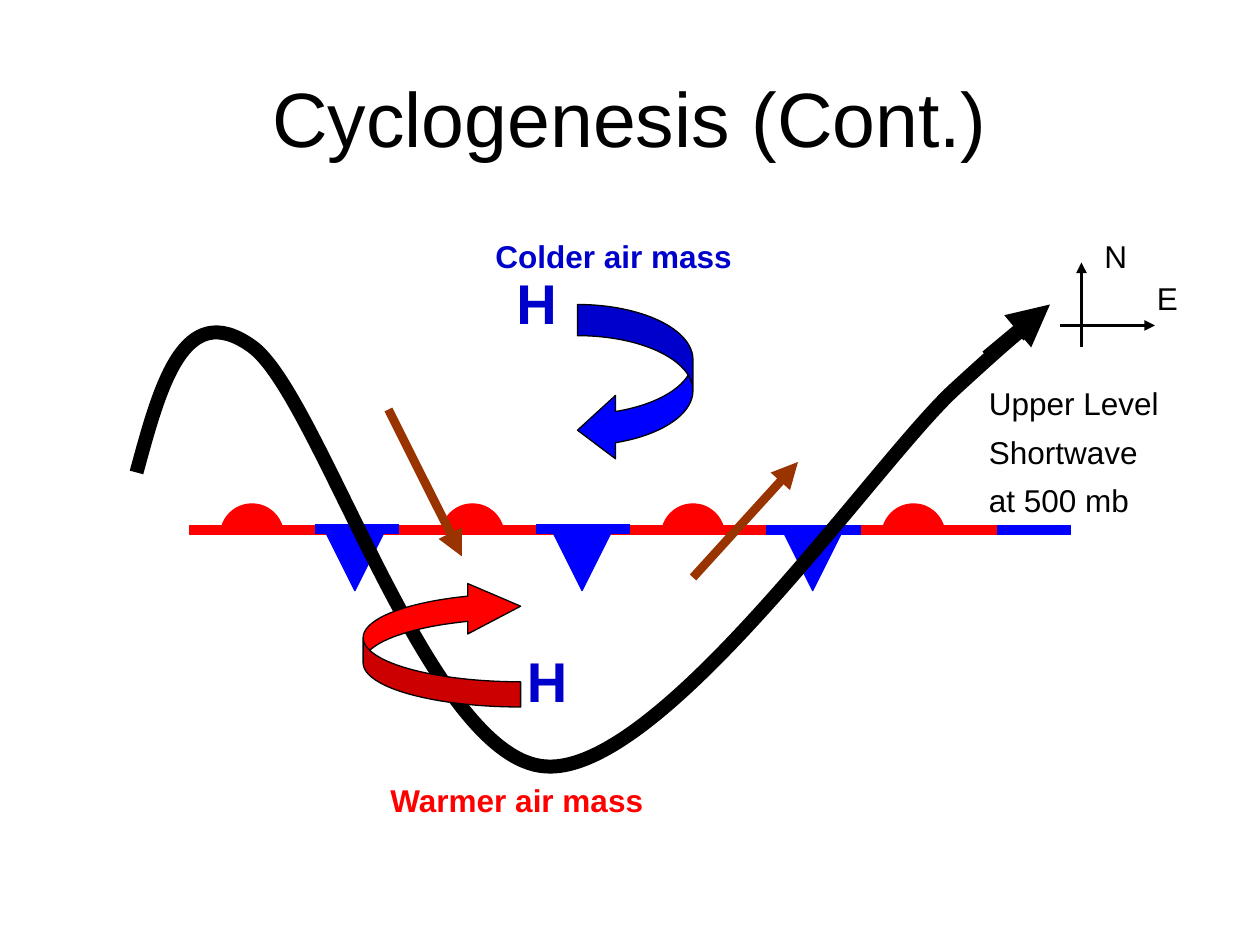
from lxml.etree import SubElement
from pptx import Presentation
from pptx.dml.color import RGBColor
from pptx.enum.shapes import MSO_CONNECTOR, MSO_SHAPE as SHAPE
from pptx.enum.text import MSO_ANCHOR, PP_ALIGN
from pptx.oxml.ns import qn
from pptx.util import Pt

COLORS = {"black": "000000", "white": "FFFFFF", "red": "FF0000", "blue": "0000FF",
          "navy": "0000CC", "brown": "993300"}

# text lines, (left, top, width, height), size, colour, bold
TITLE = (["Cyclogenesis (Cont.)"], (36, 21.6, 648, 90), 44, "black", False)
LABELS = [
    (["H"], (288, 150, 66, 45), 32, "navy", True),
    (["H"], (294, 366, 90, 45), 32, "navy", True),
    (["Warmer air mass"], (216, 443, 414, 29), 18, "red", True),
    (["Colder air mass"], (276, 132, 162, 29), 18, "navy", True),
    (["N"], (624, 132, 24, 29), 18, "black", False),
    (["E"], (654, 156, 24, 29), 18, "black", False),
    (["Upper Level", "Shortwave", "at 500 mb"], (558, 216, 120, 84), 18, "black", False),
]
LINE_GAP = 6  # keeps the last line of the shortwave label above the front

FRONT_LEFT, FRONT_RIGHT, FRONT_Y = 108, 612, 306
WARM_FIRST, WARM_STEP, WARM_COUNT, SYMBOL = 126, 126, 4, 36
# start, end, height of each cold part, and left of its triangle
COLD_PARTS = [(180, 228, 302.2, 184.8), (306, 360, 302.2, 314.6),
              (438, 492, 303, 446.4), (570, 612, 303, None)]

# start point, then groups of two control points and an end point
SHORTWAVE = [(78, 270), (91.5, 220.2), (105, 170), (144, 198),
             (182.9, 226.1), (244.8, 434.2), (312, 438),
             (378.7, 442.1), (501.1, 262.8), (546, 222),
             (591.1, 180.7), (586.8, 186.5), (582, 192)]
SHORTWAVE_HEAD = ((564, 204), (600, 174), "black", 8)
# box, rotation, adjustments, fill
CIRCULATION = [((330, 174, 66, 90), 0, (0.27, 0.55, 0.33), "blue"),
               ((207.5, 332, 90, 72), 180, (0.2, 0.4, 0.42), "red")]
WINDS = [((396, 330), (456, 264), "brown", 5), ((222, 234), (264, 318), "brown", 5)]
COMPASS = [((618, 198), (618, 150), "black", 2), ((606, 186), (660, 186), "black", 2)]


def rgb(name):
    return RGBColor.from_string(COLORS[name])


def add_text(shapes, lines, box, size, color, bold):
    tf = shapes.add_textbox(*map(Pt, box)).text_frame
    tf.word_wrap = True
    for i, line in enumerate(lines):
        p = tf.paragraphs[0] if i == 0 else tf.add_paragraph()
        if i:
            p.space_before = Pt(LINE_GAP)
        r = p.add_run()
        r.text = line
        r.font.name, r.font.size, r.font.bold = "Arial", Pt(size), bold
        r.font.color.rgb = rgb(color)
    return tf


def add_line(shapes, start, end, color, width, arrow=False):
    s = shapes.add_connector(MSO_CONNECTOR.STRAIGHT, *map(Pt, start + end))
    s.line.color.rgb, s.line.width = rgb(color), Pt(width)
    if arrow:
        SubElement(s.line._get_or_add_ln(), qn("a:tailEnd"), type="triangle")
    SubElement(s._element.spPr, qn("a:effectLst"))


def add_block(shapes, kind, box, fill, line=None, rotation=0, adjustments=()):
    s = shapes.add_shape(kind, *map(Pt, box))
    s.shadow.inherit = False
    s.rotation = rotation
    for i, value in enumerate(adjustments):
        s.adjustments[i] = value
    s.fill.solid()
    s.fill.fore_color.rgb = rgb(fill)
    s.line.color.rgb, s.line.width = rgb(line or fill), Pt(0.75)


def add_curve(shapes, points, color, width):
    """Draw a polyline through all points, then turn each three segments into a Bézier."""
    builder = shapes.build_freeform(*map(Pt, points[0]))
    builder.add_line_segments([(Pt(x), Pt(y)) for x, y in points[1:]], close=False)
    s = builder.convert_to_shape()
    s.shadow.inherit = False
    s.fill.background()
    s.line.color.rgb, s.line.width = rgb(color), Pt(width)
    path = next(s._element.iter(qn("a:path")))
    segments = path.findall(qn("a:lnTo"))
    for i in range(0, len(segments), 3):
        bezier = SubElement(path, qn("a:cubicBezTo"))
        for segment in segments[i:i + 3]:
            bezier.append(segment[0])
            path.remove(segment)


def add_front(shapes):
    add_line(shapes, (FRONT_LEFT, FRONT_Y), (FRONT_RIGHT, FRONT_Y), "red", 12)
    for i in range(WARM_COUNT):
        box = (WARM_FIRST + i * WARM_STEP, FRONT_Y - SYMBOL / 2, SYMBOL, SYMBOL)
        add_block(shapes, SHAPE.OVAL, box, "red")
    add_block(shapes, SHAPE.RECTANGLE, (96, FRONT_Y, 522, 48), "white")
    for start, end, y, left in COLD_PARTS:
        add_line(shapes, (start, y), (end, y), "blue", 6)
        if left is not None:
            add_block(shapes, SHAPE.ISOSCELES_TRIANGLE, (left, 301.5, SYMBOL, SYMBOL),
                      "blue", rotation=180)


def main():
    prs = Presentation()
    prs.slide_width, prs.slide_height = Pt(720), Pt(540)
    shapes = prs.slides.add_slide(prs.slide_layouts[6]).shapes

    tf = add_text(shapes, *TITLE)
    tf.vertical_anchor = MSO_ANCHOR.MIDDLE
    tf.paragraphs[0].alignment = PP_ALIGN.CENTER

    add_front(shapes)
    add_curve(shapes, SHORTWAVE, "black", 8)
    add_line(shapes, *SHORTWAVE_HEAD, arrow=True)
    for box, rotation, adjustments, fill in CIRCULATION:
        add_block(shapes, SHAPE.CURVED_LEFT_ARROW, box, fill, "black", rotation, adjustments)
    for arrow in WINDS + COMPASS:
        add_line(shapes, *arrow, arrow=True)
    for label in LABELS:
        add_text(shapes, *label)
    prs.save("out.pptx")


if __name__ == "__main__":
    main()
